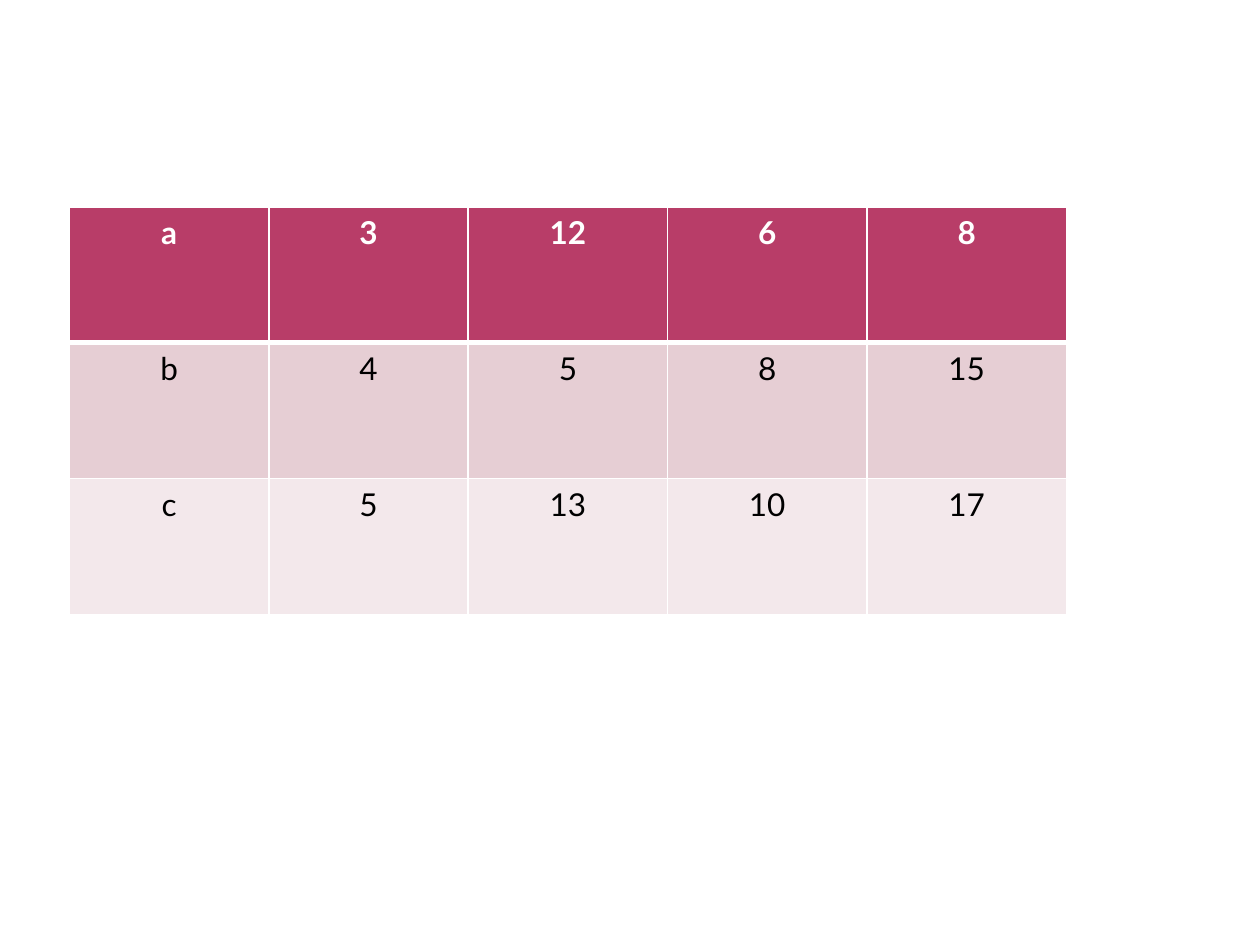
"""Build a slide with one table of three labelled rows of numbers."""
from dataclasses import dataclass

from lxml.etree import SubElement
from pptx import Presentation
from pptx.dml.color import RGBColor
from pptx.enum.text import PP_ALIGN
from pptx.oxml.ns import qn
from pptx.table import Table, _Cell
from pptx.util import Cm, Pt

WHITE = RGBColor(0xFF, 0xFF, 0xFF)
BLACK = RGBColor(0x00, 0x00, 0x00)
RASPBERRY = RGBColor(0xB8, 0x3D, 0x68)
ROSE = RGBColor(0xE6, 0xCE, 0xD4)
BLUSH = RGBColor(0xF3, 0xE8, 0xEB)

COLUMN_WIDTH = Cm(4.02)
ROW_HEIGHT = Cm(2.74)
THIN, THICK = Pt(1), Pt(3)


@dataclass(frozen=True)
class Row:
    values: tuple[str, ...]
    fill: RGBColor
    color: RGBColor = BLACK
    bold: bool = False
    top: int = THIN
    bottom: int = THIN


ROWS = (
    Row(("a", "3", "12", "6", "8"), RASPBERRY, WHITE, bold=True, bottom=THICK),
    Row(("b", "4", "5", "8", "15"), ROSE, top=THICK),
    Row(("с", "5", "13", "10", "17"), BLUSH),
)


def write_text(cell: _Cell, text: str, *, color: RGBColor, bold: bool,
               size: float = 18, font: str = "Lato") -> None:
    paragraph = cell.text_frame.paragraphs[0]
    paragraph.alignment = PP_ALIGN.CENTER
    run = paragraph.add_run()
    run.text = text
    run.font.name = font
    run.font.size = Pt(size)
    run.font.bold = bold
    run.font.color.rgb = color


def draw_borders(cell: _Cell, top: int, bottom: int) -> None:
    properties = cell._tc.get_or_add_tcPr()
    for side, width in (("L", THIN), ("R", THIN), ("T", top), ("B", bottom)):
        line = SubElement(properties, qn(f"a:ln{side}"), w=str(int(width)))
        fill = SubElement(line, qn("a:solidFill"))
        SubElement(fill, qn("a:srgbClr"), val=str(WHITE))


def draw_row(table: Table, index: int, row: Row) -> None:
    for column, value in enumerate(row.values):
        cell = table.cell(index, column)
        draw_borders(cell, row.top, row.bottom)
        cell.fill.solid()
        cell.fill.fore_color.rgb = row.fill
        write_text(cell, value, color=row.color, bold=row.bold)


def main() -> None:
    presentation = Presentation()
    presentation.slide_width = Cm(25.4)
    presentation.slide_height = Cm(19.05)
    slide = presentation.slides.add_slide(presentation.slide_layouts[6])
    column_count = len(ROWS[0].values)
    table = slide.shapes.add_table(
        len(ROWS), column_count, Cm(1.4), Cm(4.17),
        COLUMN_WIDTH * column_count, ROW_HEIGHT * len(ROWS),
    ).table
    for index, row in enumerate(ROWS):
        draw_row(table, index, row)
    presentation.save("out.pptx")


if __name__ == "__main__":
    main()
